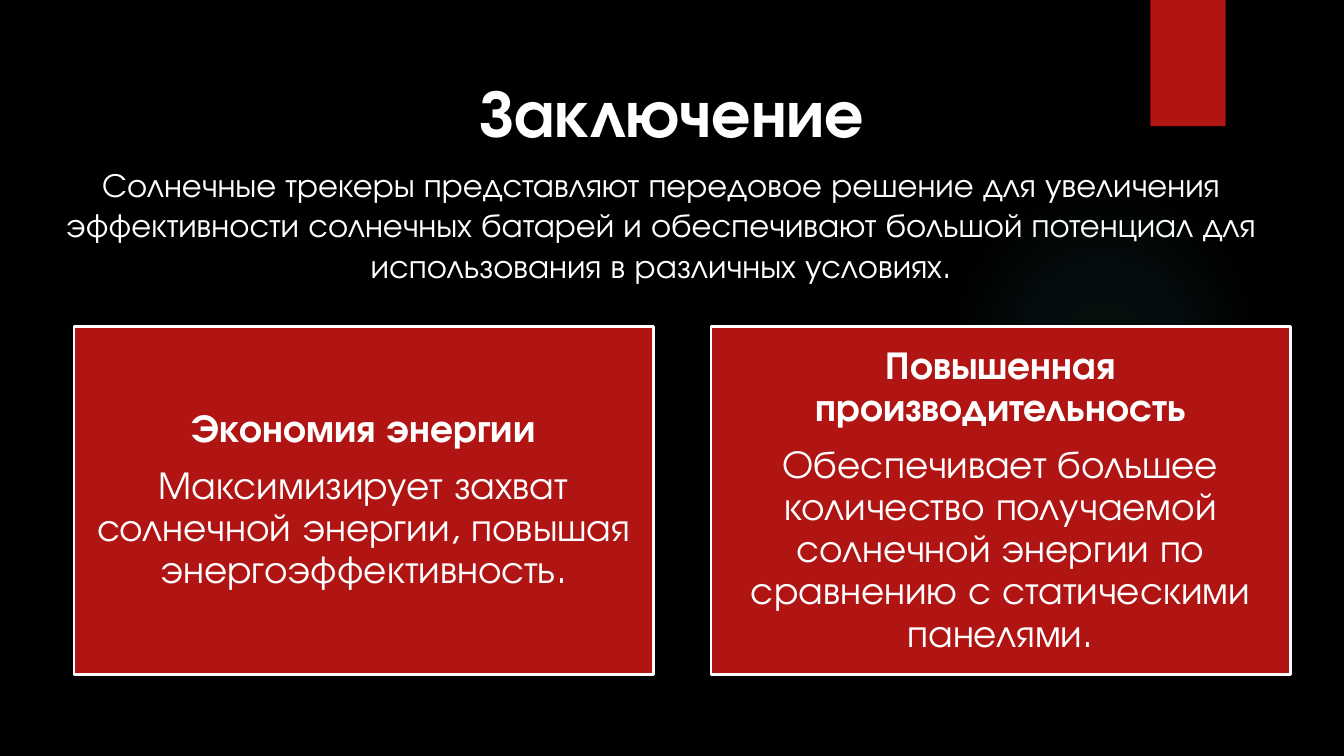
"""Builds the conclusion slide of a talk on solar trackers."""
from lxml import etree
from pptx import Presentation
from pptx import util as u
from pptx.dml import color
from pptx.enum import shapes, text
from pptx.oxml import ns, parse_xml

FONT = "TeX Gyre Adventor"
RED, WHITE, BLACK, TEAL = "B01513", "FFFFFF", "000000", "50B9C1"
SLIDE_WIDTH = 10
SLIDE_HEIGHT = SLIDE_WIDTH * 9 / 16
CARD_LEFT, CARD_TOP, CARD_STEP = 0.55, 2.43, 4.74
CARD_WIDTH, CARD_HEIGHT = 4.31, 2.59
SUMMARY = (
    "Солнечные трекеры представляют передовое решение для увеличения "
    "эффективности солнечных батарей и обеспечивают большой потенциал для "
    "использования в различных условиях."
)
BENEFITS = [
    ("Экономия энергии",
     "Максимизирует захват солнечной энергии, повышая энергоэффективность."),
    ("Повышенная производительность",
     "Обеспечивает большее количество получаемой солнечной энергии "
     "по сравнению с статическими панелями."),
]


def paint(target, hex_color):
    """Give a fill or line format a solid colour."""
    target.solid()
    target.fore_color.rgb = color.RGBColor.from_string(hex_color)


def style(paragraph, size, bold=False):
    """Centre a paragraph and set its white font."""
    paragraph.alignment = text.PP_ALIGN.CENTER
    font = paragraph.font
    font.name, font.size, font.bold = FONT, u.Pt(size), bold
    paint(font.fill, WHITE)


def place(placeholder, box, wording, size, bold=False):
    """Move a placeholder and fill it with one unbulleted paragraph."""
    (placeholder.left, placeholder.top,
     placeholder.width, placeholder.height) = map(u.Inches, box)
    frame = placeholder.text_frame
    frame.text = wording
    frame.vertical_anchor = text.MSO_ANCHOR.TOP
    frame.auto_size = text.MSO_AUTO_SIZE.SHAPE_TO_FIT_TEXT
    paragraph = frame.paragraphs[0]
    paragraph.space_before = u.Pt(0)
    properties = paragraph._p.get_or_add_pPr()
    properties.set("marL", "0")
    properties.set("indent", "0")
    etree.SubElement(properties, ns.qn("a:buNone"))
    style(paragraph, size, bold)


def add_block(slide, kind, box):
    """Add a red, shadowless, unlined preset shape."""
    block = slide.shapes.add_shape(kind, *map(u.Inches, box))
    block.shadow.inherit = False
    paint(block.fill, RED)
    block.line.fill.background()
    return block


def add_glow(slide, box):
    """Add a circle whose faint teal fades out from the centre."""
    glow = add_block(slide, shapes.MSO_SHAPE.OVAL, box)
    stops = "".join(
        f'<a:gs pos="{position * 1000}"><a:srgbClr val="{TEAL}">'
        f'<a:alpha val="{alpha * 1000}"/></a:srgbClr></a:gs>'
        for position, alpha in [(0, 7), (36, 6), (69, 0)])
    gradient = parse_xml(
        f'<a:gradFill {ns.nsdecls("a")}><a:gsLst>{stops}</a:gsLst>'
        '<a:path path="circle"><a:fillToRect l="50000" t="50000" '
        'r="50000" b="50000"/></a:path></a:gradFill>')
    properties = glow._element.spPr
    properties.replace(properties.find(ns.qn("a:solidFill")), gradient)


def add_card(slide, left, heading, detail):
    """Add a white-edged card with a bold heading over its detail."""
    card = add_block(slide, shapes.MSO_SHAPE.RECTANGLE,
                     (left, CARD_TOP, CARD_WIDTH, CARD_HEIGHT))
    paint(card.line.fill, WHITE)
    card.line.width = u.Pt(1.5)
    frame = card.text_frame
    frame.word_wrap = True
    frame.vertical_anchor = text.MSO_ANCHOR.MIDDLE
    frame.margin_left = frame.margin_right = u.Inches(0.09)
    frame.margin_top = frame.margin_bottom = u.Inches(0.09)
    frame.text = f"{heading}\n{detail}"
    for paragraph, bold in zip(frame.paragraphs, (True, False)):
        paragraph.line_spacing = 0.9
        paragraph.space_after = u.Pt(7.5)
        style(paragraph, 21, bold)


def main():
    """Build and save the slide."""
    deck = Presentation()
    deck.slide_width = u.Inches(SLIDE_WIDTH)
    deck.slide_height = u.Inches(SLIDE_HEIGHT)
    slide = deck.slides.add_slide(deck.slide_layouts[1])
    paint(slide.background.fill, BLACK)
    add_glow(slide, (7.06, 1.38, 2.31, 2.31))
    add_block(slide, shapes.MSO_SHAPE.RECTANGLE, (8.56, 0, 0.56, 0.94))
    place(slide.shapes.title, (0.78, 0.47, 8.44, 0.71), "Заключение", 36, True)
    place(slide.placeholders[1], (0.31, 1.17, 9.22, 1.01), SUMMARY, 18)
    for index, (heading, detail) in enumerate(BENEFITS):
        add_card(slide, CARD_LEFT + index * CARD_STEP, heading, detail)
    deck.save("out.pptx")


if __name__ == "__main__":
    main()
